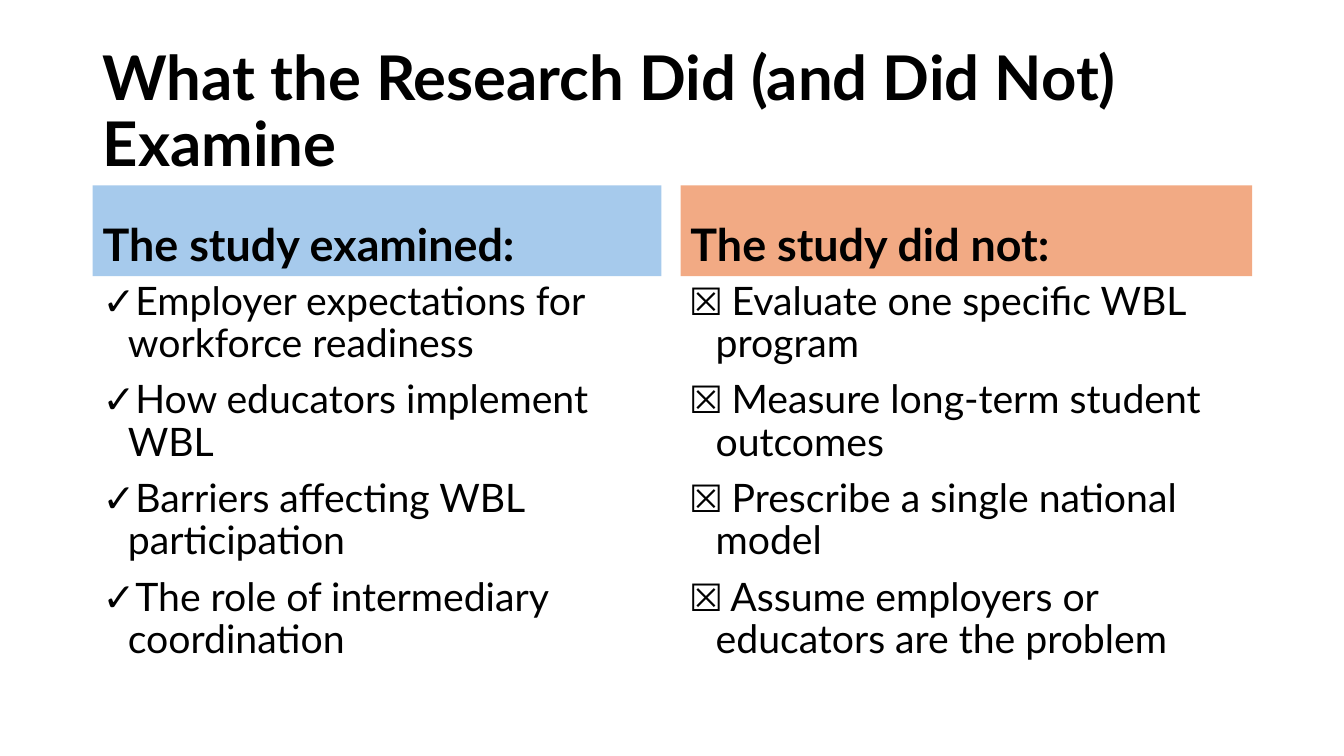
from dataclasses import dataclass

from lxml import etree
from pptx import Presentation
from pptx import util as u
from pptx.dml.color import RGBColor
from pptx.enum import shapes, text
from pptx.oxml import ns

FONT = "Lato"
BLACK = "000000"
HEADING_TOP = 1.84
HEADING_HEIGHT = 0.9
LIST_HEIGHT = 4.03
INDENT = 0.25


@dataclass
class Column:
    left: float
    width: float
    fill: str
    heading: str
    bullet: str
    items: list[str]


COLUMNS = [
    Column(0.92, 5.64, "A6CAEC", "The study examined:", "✓", [
        "Employer expectations for workforce readiness",
        "How educators implement WBL",
        "Barriers affecting WBL participation",
        "The role of intermediary coordination",
    ]),
    Column(6.75, 5.67, "F2AA84", "The study did not:", "⮽", [
        " Evaluate one specific WBL program",
        " Measure long-term student outcomes",
        " Prescribe a single national model",
        " Assume employers or educators are the problem",
    ]),
]


def color(value: str) -> RGBColor:
    return RGBColor.from_string(value)


def set_bullet(para, character: str) -> None:
    properties = para._p.get_or_add_pPr()
    properties.set("marL", str(u.Inches(INDENT)))
    properties.set("indent", str(u.Inches(-INDENT)))
    etree.SubElement(properties, ns.qn("a:buFont"), typeface=FONT)
    etree.SubElement(properties, ns.qn("a:buChar"), char=character)


def write(box, lines: list[str], size: int, bold: bool, anchor, bullet: str = "") -> None:
    frame = box.text_frame
    frame.word_wrap = True
    frame.vertical_anchor = anchor
    frame.text = "\n".join(lines)
    for index, para in enumerate(frame.paragraphs):
        if bullet:
            set_bullet(para, bullet)
        para.alignment = text.PP_ALIGN.LEFT
        para.line_spacing = 0.9
        if index:
            para.space_before = u.Pt(10)
        for span in para.runs:
            span.font.name = FONT
            span.font.size = u.Pt(size)
            span.font.bold = bold
            span.font.color.rgb = color(BLACK)


def add_title(page, title: str) -> None:
    box = page.shapes.add_textbox(u.Inches(0.92), u.Inches(0.4), u.Inches(11.5), u.Inches(1.45))
    write(box, [title], 44, True, text.MSO_ANCHOR.MIDDLE)


def add_column(page, column: Column) -> None:
    left, width = u.Inches(column.left), u.Inches(column.width)
    heading = page.shapes.add_shape(
        shapes.MSO_SHAPE.RECTANGLE, left, u.Inches(HEADING_TOP), width, u.Inches(HEADING_HEIGHT))
    heading.shadow.inherit = False
    heading.fill.solid()
    heading.fill.fore_color.rgb = color(column.fill)
    heading.line.fill.background()
    write(heading, [column.heading], 32, True, text.MSO_ANCHOR.BOTTOM)

    box = page.shapes.add_textbox(
        left, u.Inches(HEADING_TOP + HEADING_HEIGHT), width, u.Inches(LIST_HEIGHT))
    write(box, column.items, 28, False, text.MSO_ANCHOR.TOP, column.bullet)


def main() -> None:
    deck = Presentation()
    deck.slide_width = u.Inches(13.33)
    deck.slide_height = u.Inches(7.5)
    page = deck.slides.add_slide(deck.slide_layouts[6])
    add_title(page, "What the Research Did (and Did Not) Examine")
    for column in COLUMNS:
        add_column(page, column)
    deck.save("out.pptx")


if __name__ == "__main__":
    main()
